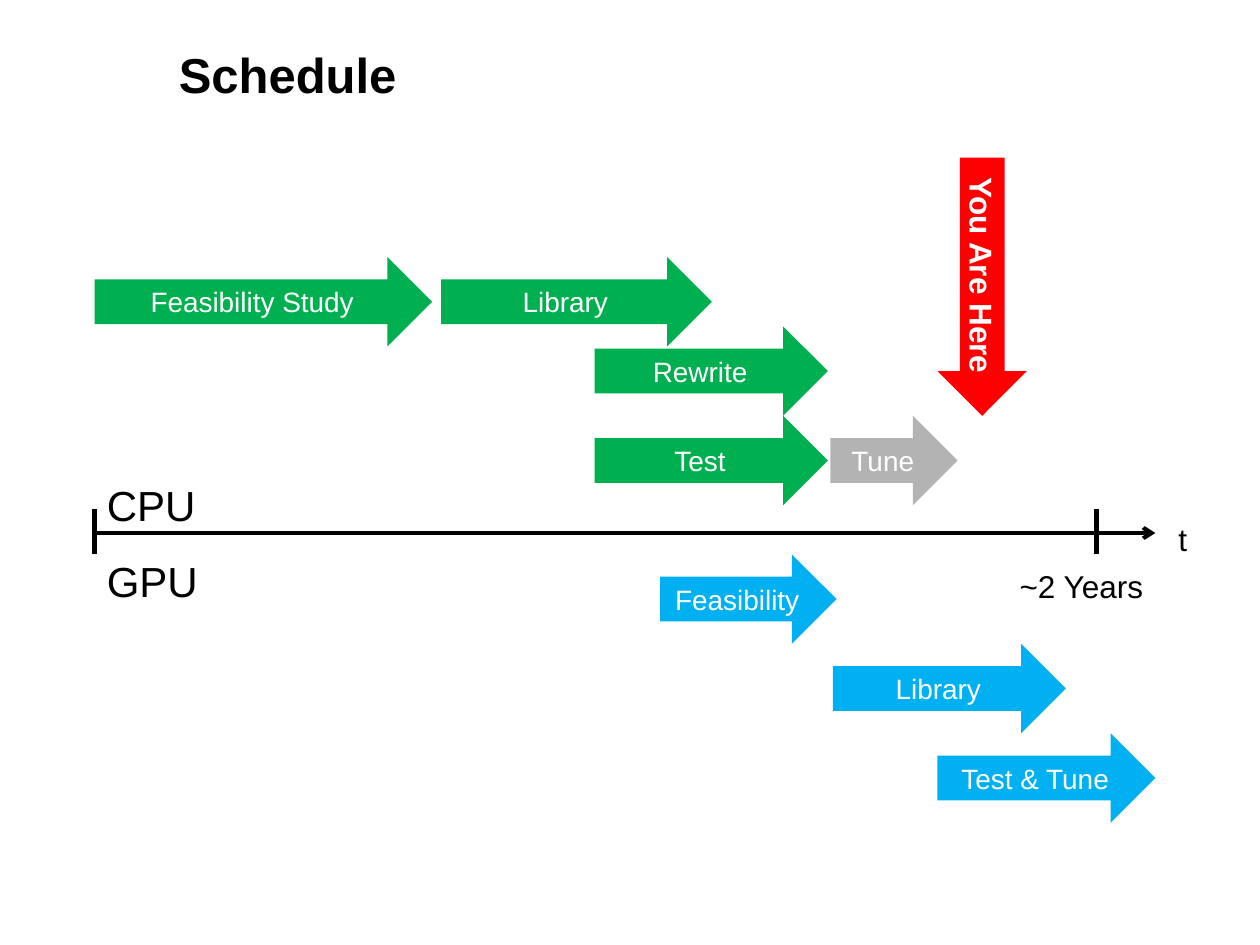
from pptx import Presentation
from pptx.dml.color import RGBColor
from pptx.enum.shapes import MSO_CONNECTOR, MSO_SHAPE
from pptx.enum.text import MSO_ANCHOR, PP_ALIGN
from pptx.oxml.ns import qn
from pptx.util import Inches, Pt
from lxml.etree import SubElement

COLORS = {"ink": "000000", "white": "FFFFFF", "done": "00B050",
          "tune": "B3B3B3", "gpu": "00B0F0", "now": "FF0000"}
FONT = "Arial"
ARROW_HEIGHT = 0.71

# Phases: label, offset from the axis start, row offset, length, colour
CPU_PHASES = [
    ("Feasibility Study", 0, 0, 2.68, "done"),
    ("Library", 2.75, 0, 2.15, "done"),
    ("Rewrite", 3.97, 0.55, 1.85, "done"),
    ("Test", 3.97, 0.55 + ARROW_HEIGHT, 1.85, "done"),
    ("Tune", 5.84, 0.55 + ARROW_HEIGHT, 1.01, "tune"),
]
GPU_PHASES = [
    ("Feasibility", 4.49, 0, 1.4, "gpu"),
    ("Library", 5.86, ARROW_HEIGHT, 1.85, "gpu"),
    ("Test & Tune", 6.69, 2 * ARROW_HEIGHT, 1.73, "gpu"),
]


def rgb(name):
    return RGBColor.from_string(COLORS[name])


def style(paragraph, size, color="ink", bold=False, align=PP_ALIGN.LEFT):
    paragraph.alignment = align
    for run in paragraph.runs:
        run.font.name = FONT
        run.font.size = Pt(size)
        run.font.bold = bold
        run.font.color.rgb = rgb(color)


def add_label(slide, left, top, width, height, text, size,
              align=PP_ALIGN.LEFT, spacing=1.5):
    label = slide.shapes.add_textbox(
        Inches(left), Inches(top), Inches(width), Inches(height))
    label.text_frame.word_wrap = False
    label.text_frame.text = text
    for paragraph in label.text_frame.paragraphs:
        style(paragraph, size, align=align)
        paragraph.line_spacing = spacing
    return label


def add_arrow(slide, left, top, width, text, color, size=16, bold=False):
    arrow = slide.shapes.add_shape(
        MSO_SHAPE.RIGHT_ARROW, Inches(left), Inches(top),
        Inches(width), Inches(ARROW_HEIGHT))
    arrow.shadow.inherit = False
    arrow.fill.solid()
    arrow.fill.fore_color.rgb = rgb(color)
    arrow.line.fill.background()
    arrow.text_frame.text = text
    arrow.text_frame.vertical_anchor = MSO_ANCHOR.MIDDLE
    style(arrow.text_frame.paragraphs[0], size, "white", bold, PP_ALIGN.CENTER)
    return arrow


def add_line(slide, x1, y1, x2, y2, weight, arrowhead=False):
    line = slide.shapes.add_connector(
        MSO_CONNECTOR.STRAIGHT, Inches(x1), Inches(y1), Inches(x2), Inches(y2))
    line.line.color.rgb = rgb("ink")
    line.line.width = Pt(weight)
    if arrowhead:
        SubElement(line.line._get_or_add_ln(), qn("a:tailEnd"), type="arrow")
    SubElement(line._element.spPr, qn("a:effectLst"))


def add_title(slide, left, top, width, height):
    title = slide.shapes.add_textbox(
        Inches(left), Inches(top), Inches(width), Inches(height))
    frame = title.text_frame
    frame.word_wrap = True
    frame.margin_left = frame.margin_right = 0
    frame.margin_top = frame.margin_bottom = 0
    frame.text = "Schedule"
    style(frame.paragraphs[0], 28, bold=True)


def add_track(slide, left, top, phases):
    for text, dx, dy, width, color in phases:
        add_arrow(slide, left + dx, top + dy, width, text, color)


def add_axis(slide, left, y, width):
    add_line(slide, left, y, left + width, y, 2.25, arrowhead=True)
    # Start and two-year ticks
    for offset in (0, 7.95):
        add_line(slide, left + offset, y + 0.17, left + offset, y - 0.19, 3)
    # Axis labels
    add_label(slide, left + width - 1.19, y + 0.07, 1.19, 0.5,
              "~2 Years", 18, PP_ALIGN.RIGHT)
    add_label(slide, left, y - 0.67, 0.93, 1.24, "CPU\nGPU", 24)
    add_label(slide, left + width + 0.08, y - 0.3, 0.27, 0.5,
              "t", 18, PP_ALIGN.RIGHT)


def add_now_marker(slide, left, top, length):
    # The arrow is turned about its centre to point down
    shift = (length - ARROW_HEIGHT) / 2
    marker = add_arrow(slide, left - shift, top + shift, length,
                       "You Are Here", "now", 18, bold=True)
    marker.rotation = 90


def main():
    presentation = Presentation()
    presentation.slide_width = Inches(10)
    presentation.slide_height = Inches(7.5)
    slide = presentation.slides.add_slide(presentation.slide_layouts[6])

    add_title(slide, 1.42, 0.35, 8.16, 1.08)
    add_track(slide, 0.75, 2.04, CPU_PHASES)
    add_track(slide, 0.75, 4.4, GPU_PHASES)
    add_axis(slide, 0.75, 4.23, 8.42)
    add_now_marker(slide, 7.44, 1.25, 2.05)
    presentation.save("out.pptx")


if __name__ == "__main__":
    main()
